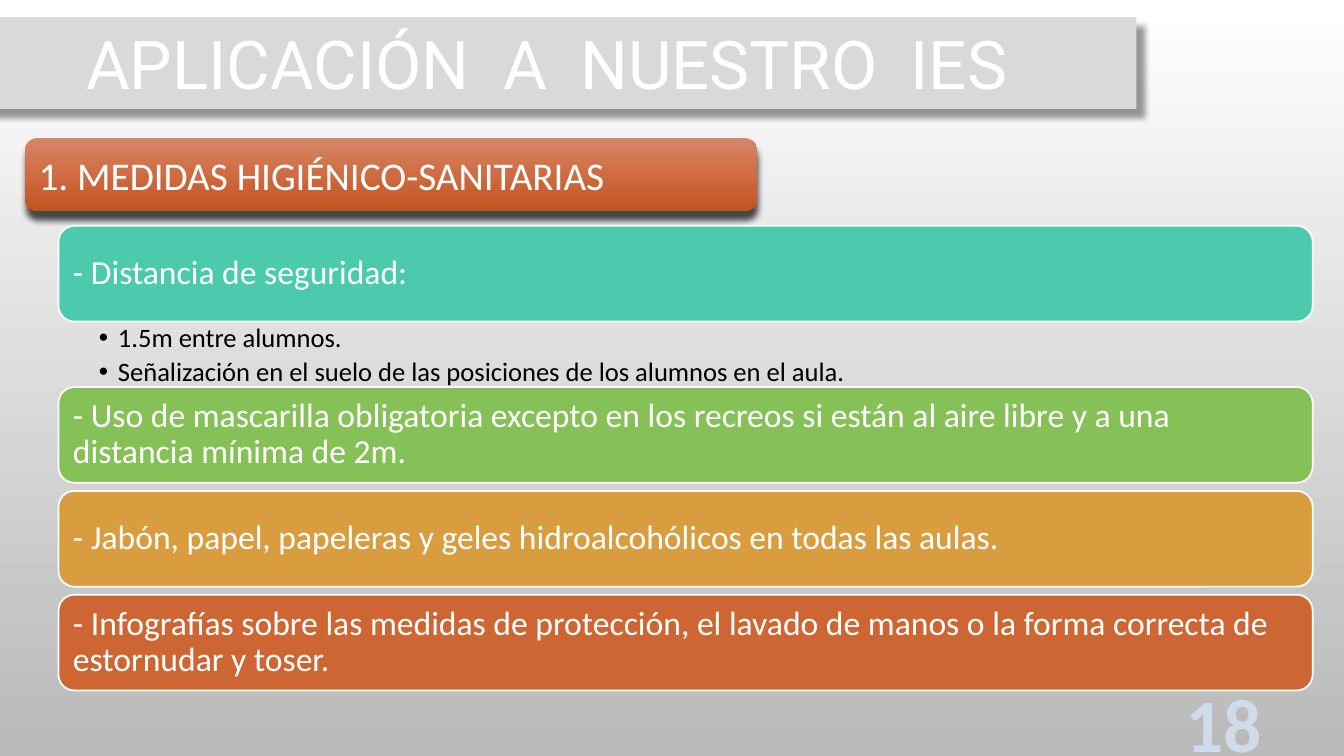
from copy import deepcopy
from dataclasses import dataclass

from lxml import etree
from pptx import Presentation
from pptx.dml.color import RGBColor
from pptx.enum.shapes import MSO_SHAPE
from pptx.enum.text import MSO_ANCHOR, MSO_AUTO_SIZE, PP_ALIGN
from pptx.oxml.ns import qn
from pptx.util import Inches, Pt

ROUNDED = MSO_SHAPE.ROUNDED_RECTANGLE
MIDDLE, TOP = MSO_ANCHOR.MIDDLE, MSO_ANCHOR.TOP
LEFT, CENTER = PP_ALIGN.LEFT, PP_ALIGN.CENTER
NO_FIT = MSO_AUTO_SIZE.NONE

COLORS = {
    "white": "FFFFFF", "black": "000000", "backdrop": "B9B9B9", "banner": "D9D9D9",
    "heading_top": "D68669", "heading_mid": "CF6C42", "heading_end": "C0541F",
    "teal": "4BCAAD", "green": "86C157", "gold": "D99C3F", "rust": "CE6633",
    "number": "D0DBE9",
}

CARD_LEFT, CARD_WIDTH, CARD_HEIGHT = 0.58, 12.44, 0.95
FIRST_CARD_TOP, CARD_GAP, DETAILS_HEIGHT = 2.24, 0.08, 0.65
BULLET_INDENT = 0.19


@dataclass
class Measure:
    text: str
    color: str
    details: tuple[str, ...] = ()


@dataclass
class Shadow:
    opacity: int
    blur: float
    distance: float
    angle: int


MEASURES = [
    Measure("- Distancia de seguridad:", "teal", (
        "1.5m entre alumnos.",
        "Señalización en el suelo de las posiciones de los alumnos en el aula.")),
    Measure("- Uso de mascarilla obligatoria excepto en los recreos si están al aire "
            "libre y a una distancia mínima de 2m.", "green"),
    Measure("- Jabón, papel, papeleras y geles hidroalcohólicos en todas las aulas.", "gold"),
    Measure("- Infografías sobre las medidas de protección, el lavado de manos o la forma "
            "correcta de estornudar y toser.", "rust"),
]


def rgb(name: str) -> RGBColor:
    return RGBColor.from_string(COLORS[name])


def place(shape, left: float, top: float, width: float, height: float) -> None:
    box = {"left": left, "top": top, "width": width, "height": height}
    for side, inches in box.items():
        setattr(shape, side, Inches(inches))


def set_frame(shape, **formats) -> None:
    for attribute, value in {"word_wrap": True, "auto_size": NO_FIT, **formats}.items():
        setattr(shape.text_frame, attribute, value)


def write(paragraph, text: str, size: float, color: str, face: str = "Calibri",
          bold: bool = False, **formats) -> None:
    for attribute, value in {"alignment": LEFT, **formats}.items():
        setattr(paragraph, attribute, value)
    run = paragraph.add_run()
    run.text = text
    for attribute, value in {"size": Pt(size), "name": face, "bold": bold}.items():
        setattr(run.font, attribute, value)
    run.font.color.rgb = rgb(color)


def paint_gradient(fill, owner, names: list[str]) -> None:
    """Fill from top to bottom with evenly spaced colours."""
    fill.gradient()
    fill.gradient_angle = 270
    stop_list = owner.find(".//" + qn("a:gsLst"))
    while len(stop_list) < len(names):
        stop_list.append(deepcopy(stop_list[0]))
    for index, (stop, name) in enumerate(zip(fill.gradient_stops, names)):
        stop.color.rgb = rgb(name)
        stop.position = index / (len(names) - 1)


def cast_shadow(shape, shadow: Shadow) -> None:
    shape.shadow.inherit = False
    effects = shape._element.spPr.find(qn("a:effectLst"))
    outer = etree.SubElement(
        effects, qn("a:outerShdw"), blurRad=str(Pt(shadow.blur)),
        dist=str(Pt(shadow.distance)), dir=str(shadow.angle * 60000),
        algn="tl", rotWithShape="0")
    shade = etree.SubElement(outer, qn("a:srgbClr"), val=COLORS["black"])
    etree.SubElement(shade, qn("a:alpha"), val=str(shadow.opacity * 1000))


def add_bullet(paragraph) -> None:
    properties = paragraph._p.get_or_add_pPr()
    properties.set("marL", str(Inches(BULLET_INDENT)))
    properties.set("indent", str(-Inches(BULLET_INDENT)))
    etree.SubElement(properties, qn("a:buFont"), typeface="Arial")
    etree.SubElement(properties, qn("a:buChar"), char="•")


def add_card(slide, measure: Measure, top: float) -> None:
    card = slide.shapes.add_shape(ROUNDED, 0, 0, 0, 0)
    place(card, CARD_LEFT, top, CARD_WIDTH, CARD_HEIGHT)
    card.shadow.inherit = False
    card.fill.solid()
    card.fill.fore_color.rgb = rgb(measure.color)
    card.line.color.rgb = rgb("white")
    card.line.width = Pt(1.25)
    set_frame(card, vertical_anchor=MIDDLE, margin_top=Inches(0.1), margin_bottom=Inches(0.1))
    write(card.text_frame.paragraphs[0], measure.text, 24, "white", line_spacing=0.9)


def fill_details(body, details: tuple[str, ...], top: float) -> None:
    place(body, CARD_LEFT, top, CARD_WIDTH, DETAILS_HEIGHT)
    set_frame(body, vertical_anchor=TOP, margin_left=Inches(0.4), margin_right=Inches(0.19),
              margin_top=Inches(0.03), margin_bottom=Inches(0.03))
    for index, detail in enumerate(details):
        frame = body.text_frame
        paragraph = frame.add_paragraph() if index else frame.paragraphs[0]
        add_bullet(paragraph)
        write(paragraph, detail, 19, "black", line_spacing=0.9,
              space_before=Pt(0), space_after=Pt(3.8))


def main() -> None:
    deck = Presentation()
    deck.slide_width, deck.slide_height = Inches(13.33), Inches(7.5)
    slide = deck.slides.add_slide(deck.slide_layouts[1])
    paint_gradient(slide.background.fill, slide._element, ["white", "backdrop"])

    # Title banner
    title = slide.shapes.title
    place(title, -0.42, 0.17, 11.69, 0.91)
    title.fill.solid()
    title.fill.fore_color.rgb = rgb("banner")
    cast_shadow(title, Shadow(40, 4, 8, 45))
    set_frame(title, vertical_anchor=MIDDLE)
    write(title.text_frame.paragraphs[0], "APLICACIÓN  A  NUESTRO  IES", 48, "white",
          "Roboto", alignment=CENTER)

    # Slide number
    number = slide.shapes.add_textbox(0, 0, 0, 0)
    place(number, 11.64, 6.67, 1, 1.01)
    set_frame(number, word_wrap=False)
    write(number.text_frame.paragraphs[0], "18", 54, "number", bold=True, alignment=CENTER)

    # Section heading
    heading = slide.shapes.add_shape(ROUNDED, 0, 0, 0, 0)
    place(heading, 0.25, 1.37, 7.26, 0.72)
    paint_gradient(heading.fill, heading._element.spPr,
                   ["heading_top", "heading_mid", "heading_end"])
    heading.line.fill.background()
    cast_shadow(heading, Shadow(69, 5, 6, 90))
    set_frame(heading, vertical_anchor=MIDDLE)
    write(heading.text_frame.paragraphs[0], "1. MEDIDAS HIGIÉNICO-SANITARIAS", 28, "white")

    # Measures, stacked, with the details directly under their card
    top = FIRST_CARD_TOP
    for measure in MEASURES:
        add_card(slide, measure, top)
        top += CARD_HEIGHT
        if measure.details:
            fill_details(slide.placeholders[1], measure.details, top)
            top += DETAILS_HEIGHT
        else:
            top += CARD_GAP

    deck.save("out.pptx")


if __name__ == "__main__":
    main()
